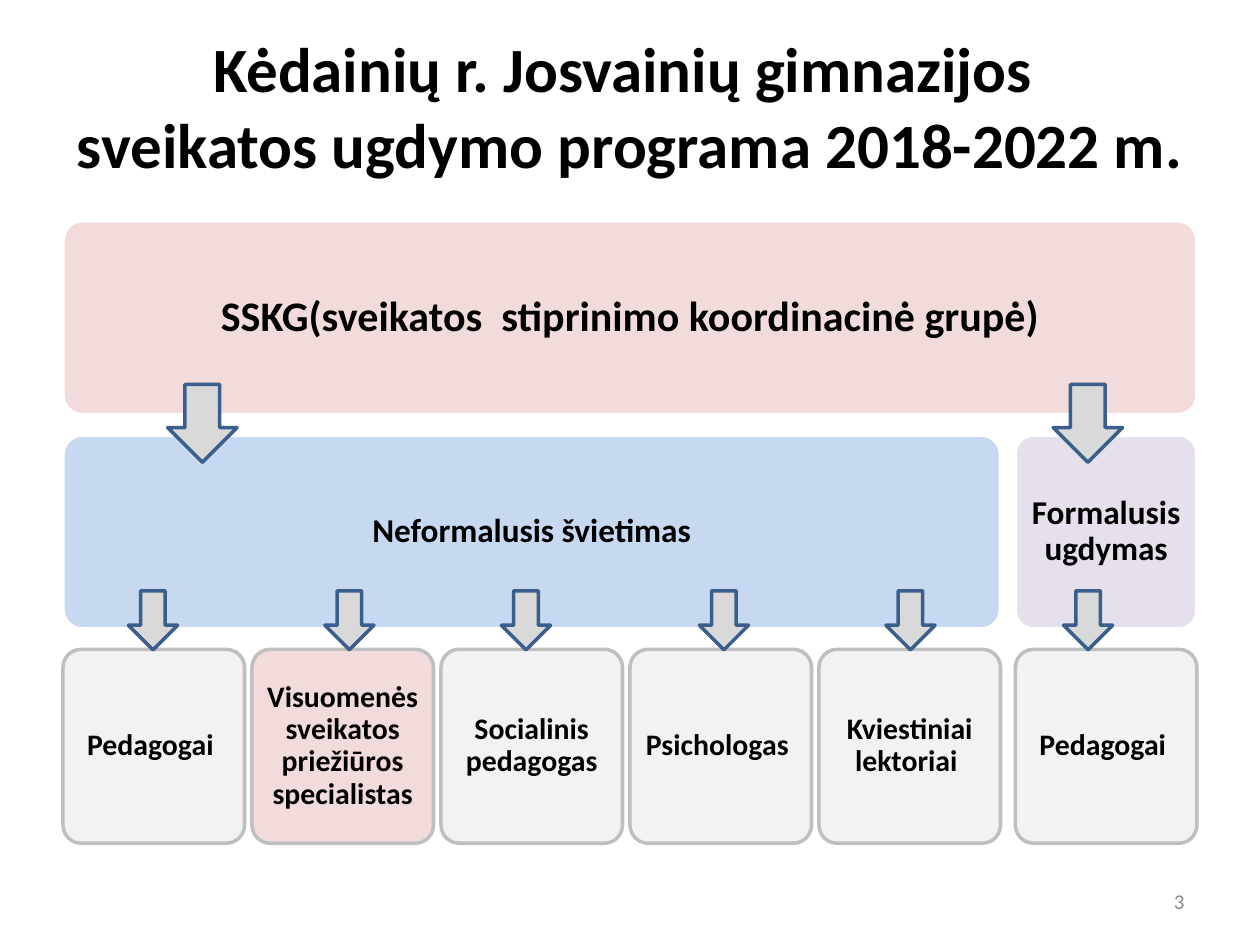
from pptx import Presentation
from pptx.dml.color import RGBColor
from pptx.enum.shapes import MSO_SHAPE
from pptx.enum.text import MSO_ANCHOR, MSO_AUTO_SIZE, PP_ALIGN
from pptx.util import Cm, Pt

ROUNDED = MSO_SHAPE.ROUNDED_RECTANGLE
DOWN_ARROW = MSO_SHAPE.DOWN_ARROW
MIDDLE = MSO_ANCHOR.MIDDLE
CENTER, RIGHT = PP_ALIGN.CENTER, PP_ALIGN.RIGHT
COLORS = {
    "black": "000000", "white": "FFFFFF", "pink": "F2DCDB", "blue": "C6D9F1",
    "lilac": "E6E0EC", "light": "F2F2F2", "border": "BFBFBF",
    "arrow": "D9D9D9", "arrow line": "3A5F8C", "number": "8C8C8C",
}


def write(box, text, size, color="black", bold=True, align=CENTER):
    """Fill a box with one vertically centred paragraph and return it."""
    frame = box.text_frame
    frame.word_wrap = True
    frame.auto_size = MSO_AUTO_SIZE.NONE
    frame.vertical_anchor = MIDDLE
    frame.text = text
    paragraph = frame.paragraphs[0]
    paragraph.alignment = align
    font = paragraph.font
    font.name, font.size, font.bold = "Calibri", Pt(size), bold
    font.color.rgb = RGBColor.from_string(COLORS[color])
    return paragraph


def add_filled(kind, left, top, width, height, fill, line):
    """Add an outlined shape without shadow; lengths are in centimetres."""
    shape = page.shapes.add_shape(kind, Cm(left), Cm(top), Cm(width), Cm(height))
    shape.shadow.inherit = False
    shape.fill.solid()
    shape.fill.fore_color.rgb = RGBColor.from_string(COLORS[fill])
    shape.line.color.rgb = RGBColor.from_string(COLORS[line])
    shape.line.width = Pt(2)
    return shape


deck = Presentation()
deck.slide_width, deck.slide_height = Cm(25.4), Cm(19.05)
page = deck.slides.add_slide(deck.slide_layouts[5])

title = page.shapes.title
title.left, title.top, title.width, title.height = Cm(0.89), Cm(0.53), Cm(23.62), Cm(3.18)
write(title, "Kėdainių r. Josvainių gimnazijos \vsveikatos ugdymo programa 2018-2022 m.", 36)

# Three rows of boxes; the formal column stands apart on the right
LEFT, COLUMN_STEP, COLUMN_WIDTH = 1.27, 3.81, 3.66
FORMAL_LEFT = 20.47
TOP, ROW_STEP, ROW_HEIGHT = 4.45, 4.32, 3.91
informal_width = 4 * COLUMN_STEP + COLUMN_WIDTH
full_width = FORMAL_LEFT + COLUMN_WIDTH - LEFT

boxes = [
    (0, LEFT, full_width, "SSKG(sveikatos  stiprinimo koordinacinė grupė)", 24, "pink", "white"),
    (1, LEFT, informal_width, "Neformalusis švietimas", 19, "blue", "white"),
    (1, FORMAL_LEFT, COLUMN_WIDTH, "Formalusis ugdymas", 19, "lilac", "white"),
    (2, FORMAL_LEFT, COLUMN_WIDTH, "Pedagogai ", 17, "light", "border"),
]
specialists = [
    ("Pedagogai ", "light"),
    ("Visuomenės sveikatos priežiūros specialistas", "pink"),
    ("Socialinis pedagogas", "light"),
    ("Psichologas ", "light"),
    ("Kviestiniai lektoriai ", "light"),
]
for column, (text, fill) in enumerate(specialists):
    boxes.append((2, LEFT + column * COLUMN_STEP, COLUMN_WIDTH, text, 17, fill, "border"))

for row, left, width, text, size, fill, line in boxes:
    box = add_filled(ROUNDED, left, TOP + row * ROW_STEP, width, ROW_HEIGHT, fill, line)
    box.adjustments[0] = 0.1
    paragraph = write(box, text, size)
    paragraph.line_spacing = 0.9
    frame = box.text_frame
    frame.margin_left = frame.margin_right = Cm(0.18)
    frame.margin_top = frame.margin_bottom = Cm(0.18)

for left in (3.38, 21.23):
    add_filled(DOWN_ARROW, left, 7.75, 1.4, 1.57, "arrow", "arrow line")
for left in (2.59, 6.55, 10.11, 14.1, 17.86, 21.44):
    add_filled(DOWN_ARROW, left, 11.91, 0.99, 1.19, "arrow", "arrow line")

number = page.shapes.add_textbox(Cm(18.21), Cm(17.65), Cm(5.92), Cm(1.02))
write(number, "3", 12, "number", False, RIGHT)

deck.save("out.pptx")
